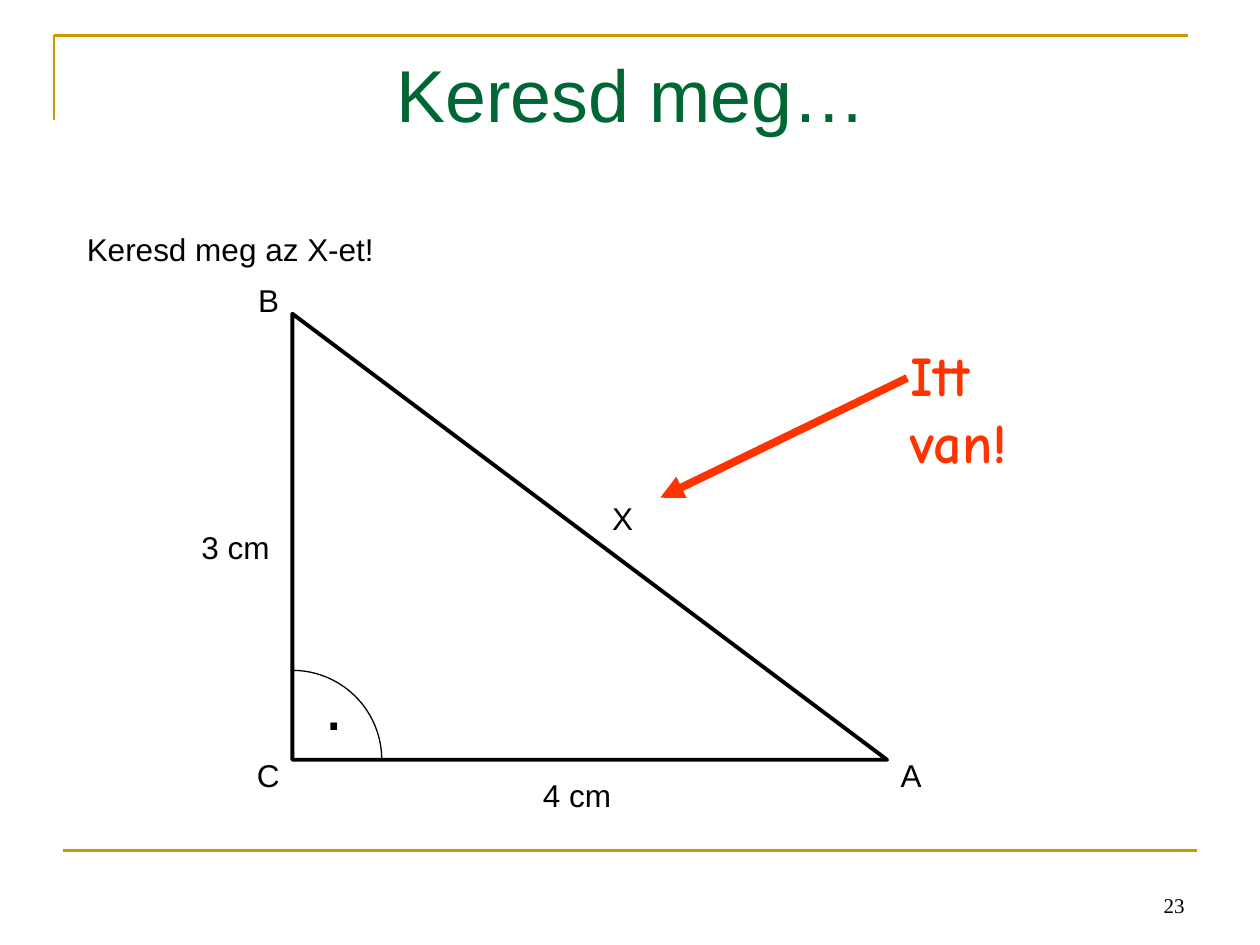
from dataclasses import dataclass

from lxml.etree import SubElement
from pptx import Presentation
from pptx.dml.color import RGBColor
from pptx.enum.shapes import MSO_CONNECTOR, MSO_SHAPE
from pptx.enum.text import MSO_ANCHOR, MSO_AUTO_SIZE, PP_ALIGN
from pptx.oxml.ns import qn
from pptx.util import Inches, Pt


@dataclass(frozen=True)
class Theme:
    gold: RGBColor = RGBColor(0xCC, 0x99, 0x00)
    green: RGBColor = RGBColor(0x00, 0x66, 0x33)
    red: RGBColor = RGBColor(0xFF, 0x33, 0x00)
    black: RGBColor = RGBColor(0x00, 0x00, 0x00)
    body_font: str = "Arial"
    number_font: str = "Times New Roman"
    callout_font: str = "Comic Neue"
    title_size: int = 42
    dot_size: int = 40
    callout_size: int = 32
    label_size: int = 18
    number_size: int = 12


@dataclass(frozen=True)
class Label:
    text: str
    left: float
    top: float
    width: float
    height: float = 0.4
    size: int = Theme.label_size


THEME = Theme()

# Right triangle: C is the right-angled corner
CORNER_X, CORNER_Y = 2.32, 6.03
BASE, HEIGHT = 4.72, 3.54
ARC_RADIUS = 0.71

LABELS = [
    Label("Keresd meg az X-et!", 0.59, 1.78, 2.48),
    Label("3 cm", 1.5, 4.14, 0.74),
    Label("4 cm", 4.21, 6.11, 0.74),
    Label("X", 4.76, 3.91, 0.37),
    Label(".", 2.48, 5.19, 0.36, 0.77, THEME.dot_size),
    Label("A", 7.05, 5.95, 0.37),
    Label("B", 1.95, 2.18, 0.37),
    Label("C", 1.94, 5.95, 0.38),
]


def add_text(shapes, text: str, left: float, top: float, width: float, height: float, *,
             size: int = THEME.label_size, font: str = THEME.body_font,
             color: RGBColor = THEME.black, bold: bool = False,
             align: PP_ALIGN = PP_ALIGN.LEFT, anchor: MSO_ANCHOR = MSO_ANCHOR.TOP,
             wrap: bool = True, grow: bool = False, margin_top: float = 0.05):
    shape = shapes.add_textbox(Inches(left), Inches(top), Inches(width), Inches(height))
    frame = shape.text_frame
    frame.word_wrap = wrap
    frame.auto_size = MSO_AUTO_SIZE.SHAPE_TO_FIT_TEXT if grow else MSO_AUTO_SIZE.NONE
    frame.vertical_anchor = anchor
    frame.margin_top = Inches(margin_top)
    paragraph = frame.paragraphs[0]
    paragraph.alignment = align
    run = paragraph.add_run()
    run.text = text
    run.font.size = Pt(size)
    run.font.name = font
    run.font.bold = bold
    run.font.color.rgb = color
    return shape


def style_outline(shape, color: RGBColor, weight: float) -> None:
    shape.shadow.inherit = False
    shape.fill.background()
    shape.line.color.rgb = color
    shape.line.width = Pt(weight)


def add_outline(shapes, kind: MSO_SHAPE, left: float, top: float,
                width: float, height: float, weight: float) -> None:
    shape = shapes.add_shape(kind, Inches(left), Inches(top), Inches(width), Inches(height))
    style_outline(shape, THEME.black, weight)


def add_line(shapes, start: tuple[float, float], end: tuple[float, float],
             color: RGBColor, weight: float, arrow: bool = False) -> None:
    connector = shapes.add_connector(
        MSO_CONNECTOR.STRAIGHT, *(Inches(value) for value in (*start, *end)))
    connector.line.color.rgb = color
    connector.line.width = Pt(weight)
    if arrow:
        SubElement(connector.line._get_or_add_ln(), qn("a:tailEnd"), type="triangle")
    SubElement(connector._element.spPr, qn("a:effectLst"))


def add_frame(shapes) -> None:
    builder = shapes.build_freeform(Inches(0.43), Inches(0.95))
    corner, end = (Inches(0.43), Inches(0.28)), (Inches(9.43), Inches(0.28))
    builder.add_line_segments([corner, end], close=False)
    style_outline(builder.convert_to_shape(), THEME.gold, 1.5)
    add_line(shapes, (0.5, 6.75), (9.5, 6.75), THEME.gold, 1.5)


def add_triangle(shapes) -> None:
    add_outline(shapes, MSO_SHAPE.RIGHT_TRIANGLE, CORNER_X, CORNER_Y - HEIGHT,
                BASE, HEIGHT, 2.25)
    # The arc's box is its full circle, centred on the corner
    add_outline(shapes, MSO_SHAPE.ARC, CORNER_X - ARC_RADIUS, CORNER_Y - ARC_RADIUS,
                2 * ARC_RADIUS, 2 * ARC_RADIUS, 0.75)


def add_callout(shapes) -> None:
    group = shapes.add_group_shape()
    add_text(group.shapes, "Itt van!", 7.13, 2.65, 1.58, 0.63, size=THEME.callout_size,
             font=THEME.callout_font, color=THEME.red, bold=True)
    add_line(group.shapes, (7.2, 3), (5.24, 3.95), THEME.red, 4.5, arrow=True)


def main() -> None:
    presentation = Presentation()
    presentation.slide_width, presentation.slide_height = Inches(10), Inches(7.5)
    slide = presentation.slides.add_slide(presentation.slide_layouts[6])
    shapes = slide.shapes

    # Frame, page number and title
    add_frame(shapes)
    add_text(shapes, "23", 7.17, 6.83, 2.33, 0.5, size=THEME.number_size,
             font=THEME.number_font, align=PP_ALIGN.RIGHT, anchor=MSO_ANCHOR.BOTTOM)
    add_text(shapes, "Keresd meg…", 0.51, 0.28, 9, 1.25, size=THEME.title_size,
             color=THEME.green, align=PP_ALIGN.CENTER, margin_top=0.11)

    # Triangle with its labels and the answer
    add_triangle(shapes)
    for label in LABELS:
        add_text(shapes, label.text, label.left, label.top, label.width, label.height,
                 size=label.size, wrap=False, grow=True)
    add_callout(shapes)

    presentation.save("out.pptx")


if __name__ == "__main__":
    main()
